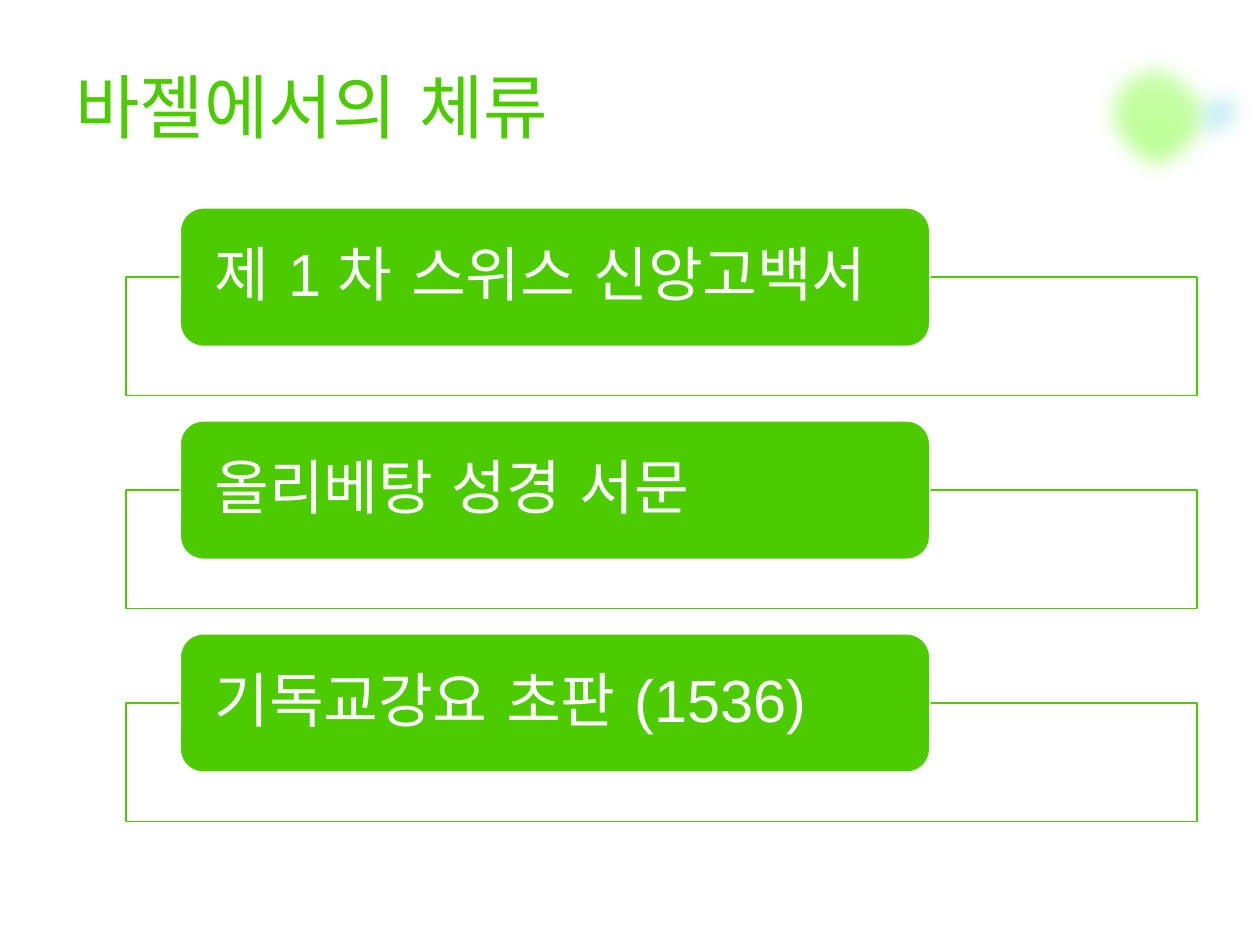
from lxml import etree
from pptx import Presentation
from pptx.dml.color import RGBColor
from pptx.enum.shapes import MSO_SHAPE
from pptx.enum.text import MSO_ANCHOR, PP_ALIGN
from pptx.oxml.ns import qn
from pptx.util import Inches, Pt

RECTANGLE = MSO_SHAPE.RECTANGLE
ROUNDED = MSO_SHAPE.ROUNDED_RECTANGLE
MIDDLE = MSO_ANCHOR.MIDDLE
LEFT = PP_ALIGN.LEFT

GREEN = RGBColor(0x4C, 0xCB, 0x00)
WHITE = RGBColor(0xFF, 0xFF, 0xFF)
LIME = RGBColor(0xB2, 0xFF, 0x84)
AQUA = RGBColor(0x8C, 0xDF, 0xEC)
PALE_AQUA = RGBColor(0xB0, 0xE9, 0xF2)

HANGUL_FONT = "DejaVu Sans"
TOPICS = ["제 1 차 스위스 신앙고백서", "올리베탕 성경 서문", "기독교강요 초판 (1536)"]
FIRST_ROW, ROW_STEP = 1.65, 1.69
LABEL_HEIGHT = 1.1
SOFT_RADIUS = Pt(12.5)

LARGE_BLOB = [
    (9.74, 1.03),
    (9.71, 1.18), (9.74, 1.26), (9.49, 1.39),
    (9.36, 1.47), (9.21, 1.5), (9.06, 1.46),
    (8.91, 1.43), (8.78, 1.34), (8.7, 1.21),
    (8.65, 1.04), (8.59, 0.93), (8.63, 0.78),
    (8.66, 0.63), (8.75, 0.5), (8.88, 0.42),
    (9.06, 0.37), (9.18, 0.32), (9.31, 0.34),
    (9.43, 0.37), (9.55, 0.45), (9.63, 0.58),
    (9.71, 0.71), (9.78, 0.88), (9.74, 1.03),
]
SMALL_BLOB = [
    (9.97, 1.05),
    (10.03, 0.96), (10, 0.89), (9.99, 0.82),
    (9.98, 0.75), (9.97, 0.65), (9.91, 0.6),
    (9.85, 0.56), (9.71, 0.54), (9.62, 0.56),
    (9.54, 0.58), (9.45, 0.63), (9.39, 0.72),
    (9.32, 0.81), (9.32, 0.92), (9.34, 1.01),
    (9.35, 1.09), (9.4, 1.19), (9.46, 1.24),
    (9.53, 1.29), (9.64, 1.31), (9.71, 1.31),
    (9.78, 1.3), (9.81, 1.29), (9.87, 1.2),
]


def set_alpha(color_element, percent):
    etree.SubElement(color_element, qn("a:alpha")).set("val", str(percent * 1000))


def lines_to_curves(shape):
    lines = list(shape.element.iter(qn("a:lnTo")))
    for start in range(0, len(lines), 3):
        first, *others = lines[start:start + 3]
        curve = etree.Element(qn("a:cubicBezTo"))
        first.addprevious(curve)
        for line in (first, *others):
            curve.append(line[0])
            line.getparent().remove(line)


def add_blob(slide, controls, rotation, colors, end_alpha):
    points = [(Inches(x), Inches(y)) for x, y in controls]
    builder = slide.shapes.build_freeform(*points[0])
    builder.add_line_segments(points[1:], close=True)
    shape = builder.convert_to_shape()
    lines_to_curves(shape)
    shape.rotation = rotation
    shape.line.fill.background()
    shape.fill.gradient()
    shape.fill.gradient_angle = 270
    for stop, color, position in zip(shape.fill.gradient_stops, colors, (0, 1)):
        stop.color.rgb = color
        stop.position = position
    properties = shape.element.spPr
    set_alpha(properties.findall(".//" + qn("a:srgbClr"))[-1], end_alpha)
    shape.shadow.inherit = False
    soft_edge = etree.SubElement(properties.find(qn("a:effectLst")), qn("a:softEdge"))
    soft_edge.set("rad", str(int(SOFT_RADIUS)))


def add_box(slide, kind, left, top, width, height, fill, line):
    shape = slide.shapes.add_shape(
        kind, Inches(left), Inches(top), Inches(width), Inches(height))
    shape.shadow.inherit = False
    shape.fill.solid()
    shape.fill.fore_color.rgb = fill
    shape.line.color.rgb = line
    shape.line.width = Pt(1)
    return shape


def write_text(shape, text, size, color, font, line_spacing=1.0):
    frame = shape.text_frame
    frame.word_wrap = True
    frame.vertical_anchor = MIDDLE
    paragraph = frame.paragraphs[0]
    paragraph.alignment = LEFT
    paragraph.line_spacing = line_spacing
    run = paragraph.add_run()
    run.text = text
    run.font.size = Pt(size)
    run.font.name = font
    run.font.color.rgb = color
    latin = run.font._element.find(qn("a:latin"))
    hangul = etree.Element(qn("a:ea"))
    hangul.set("typeface", HANGUL_FONT)
    latin.addnext(hangul)


def add_topic(slide, text, top):
    panel = add_box(slide, RECTANGLE, 1, top + LABEL_HEIGHT / 2, 8.5, 0.94, WHITE, GREEN)
    set_alpha(panel.element.spPr.find(qn("a:solidFill"))[0], 90)
    label = add_box(slide, ROUNDED, 1.43, top, 5.95, LABEL_HEIGHT, GREEN, WHITE)
    label.adjustments[0] = 0.167
    frame = label.text_frame
    frame.margin_left = frame.margin_right = Inches(0.22)
    frame.margin_top = frame.margin_bottom = 0
    write_text(label, text, size=34, color=WHITE, font="Arial", line_spacing=0.9)


def add_title(slide, text):
    title = slide.shapes.title
    title.left, title.top = Inches(0.5), Inches(0.33)
    title.width, title.height = Inches(9), Inches(1.01)
    write_text(title, text, size=40, color=GREEN, font=HANGUL_FONT)


def main():
    presentation = Presentation()
    presentation.slide_width = Inches(10)
    presentation.slide_height = Inches(7.5)
    slide = presentation.slides.add_slide(presentation.slide_layouts[5])
    add_title(slide, "바젤에서의 체류")
    add_blob(slide, LARGE_BLOB, 192.5, (LIME, LIME), 58)
    add_blob(slide, SMALL_BLOB, 34.8, (AQUA, PALE_AQUA), 36)
    for row, topic in enumerate(TOPICS):
        add_topic(slide, topic, FIRST_ROW + row * ROW_STEP)
    presentation.save("out.pptx")


if __name__ == "__main__":
    main()
